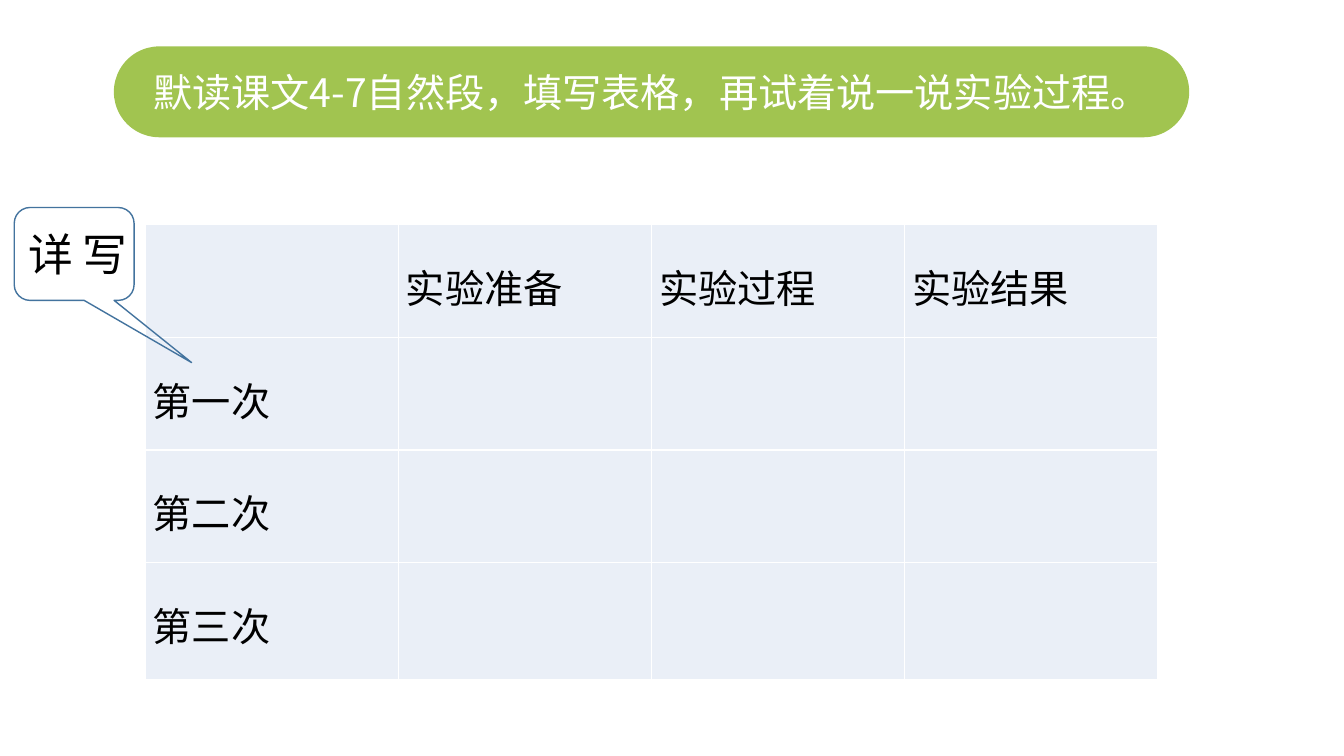
from lxml.etree import SubElement
from pptx import Presentation
from pptx.dml.color import RGBColor
from pptx.enum.shapes import MSO_SHAPE
from pptx.enum.text import MSO_ANCHOR, MSO_AUTO_SIZE, PP_ALIGN
from pptx.oxml.ns import qn
from pptx.util import Cm, Pt

WHITE = RGBColor(0xFF, 0xFF, 0xFF)
BLACK = RGBColor(0, 0, 0)
GREEN = RGBColor(0xA1, 0xC4, 0x50)
BLUE = RGBColor(0x43, 0x73, 0x9E)
PALE = RGBColor(0xEA, 0xEF, 0xF7)
SANS = "Noto Sans CJK SC"

GRID = [
    ["", "实验准备", "实验过程", "实验结果"],
    ["第一次", "", "", ""],
    ["第二次", "", "", ""],
    ["第三次", "", "", ""],
]
COL = Cm(6.38)
ROWS = [Cm(2.84)] * 3 + [Cm(2.95)]


def apply(item, form):
    for name, value in form.items():
        setattr(item, name, value)


def write(frame, text, size, color, font=SANS, **form):
    par = frame.paragraphs[0]
    apply(par, form)
    run = par.add_run()
    run.text = text
    apply(run.font, {"size": Pt(size), "name": font})
    run.font.color.rgb = color
    # East Asian characters need their own typeface
    SubElement(run.font._element, qn("a:ea")).set("typeface", SANS)


def edge(cell):
    props = cell._tc.get_or_add_tcPr()
    for at, side in enumerate(("lnL", "lnR", "lnT", "lnB")):
        line = props.makeelement(qn(f"a:{side}"), {"w": str(Pt(1))})
        fill = SubElement(line, qn("a:solidFill"))
        SubElement(fill, qn("a:srgbClr")).set("val", str(WHITE))
        props.insert(at, line)


def add_grid(slide):
    frame = slide.shapes.add_table(
        len(GRID), len(GRID[0]), Cm(3.66), Cm(5.66), COL * 4, sum(ROWS))
    table = frame.table
    apply(table, {"first_row": False, "horz_banding": False})
    for col in table.columns:
        col.width = COL
    for row, high, words in zip(table.rows, ROWS, GRID):
        row.height = high
        for cell, word in zip(row.cells, words):
            apply(cell, {"margin_left": Cm(0.19), "margin_right": Cm(0.19),
                         "margin_top": Cm(0.13), "margin_bottom": Cm(0.13)})
            cell.fill.solid()
            cell.fill.fore_color.rgb = PALE
            edge(cell)
            if word:
                write(cell.text_frame, word, 28, BLACK,
                      alignment=PP_ALIGN.JUSTIFY, line_spacing=1.5)


def add_form(slide, kind, box, adjust, fill=None, line=None):
    shape = slide.shapes.add_shape(kind, *map(Cm, box))
    shape.shadow.inherit = False
    for at, value in enumerate(adjust):
        shape.adjustments[at] = value
    if fill is None:
        shape.fill.background()
    else:
        shape.fill.solid()
        shape.fill.fore_color.rgb = fill
    if line is None:
        shape.line.fill.background()
    else:
        shape.line.color.rgb = line
        shape.line.width = Pt(1)
    return shape


def add_label(slide, box, text):
    frame = slide.shapes.add_textbox(*map(Cm, box)).text_frame
    apply(frame, {"word_wrap": False,
                  "auto_size": MSO_AUTO_SIZE.SHAPE_TO_FIT_TEXT})
    write(frame, text, 32, BLACK, "Arial")


def main():
    deck = Presentation()
    apply(deck, {"slide_width": Cm(33.87), "slide_height": Cm(19.05)})
    slide = deck.slides.add_slide(deck.slide_layouts[6])

    # Table of the three experiments
    add_grid(slide)

    # Task banner
    task = add_form(slide, MSO_SHAPE.ROUNDED_RECTANGLE,
                    (2.87, 1.17, 27.1, 2.29), [0.5], fill=GREEN)
    task.text_frame.vertical_anchor = MSO_ANCHOR.MIDDLE
    write(task.text_frame, "默读课文4-7自然段，填写表格，再试着说一说实验过程。",
          28, WHITE, alignment=PP_ALIGN.CENTER)

    # Callout with its label
    add_form(slide, MSO_SHAPE.ROUNDED_RECTANGULAR_CALLOUT,
             (0.36, 5.23, 3.02, 2.34), [0.98, 1.17, 0.17], line=BLUE)
    add_label(slide, (0.46, 5.59, 3.1, 1.63), "详 写")

    deck.save("out.pptx")


if __name__ == "__main__":
    main()
